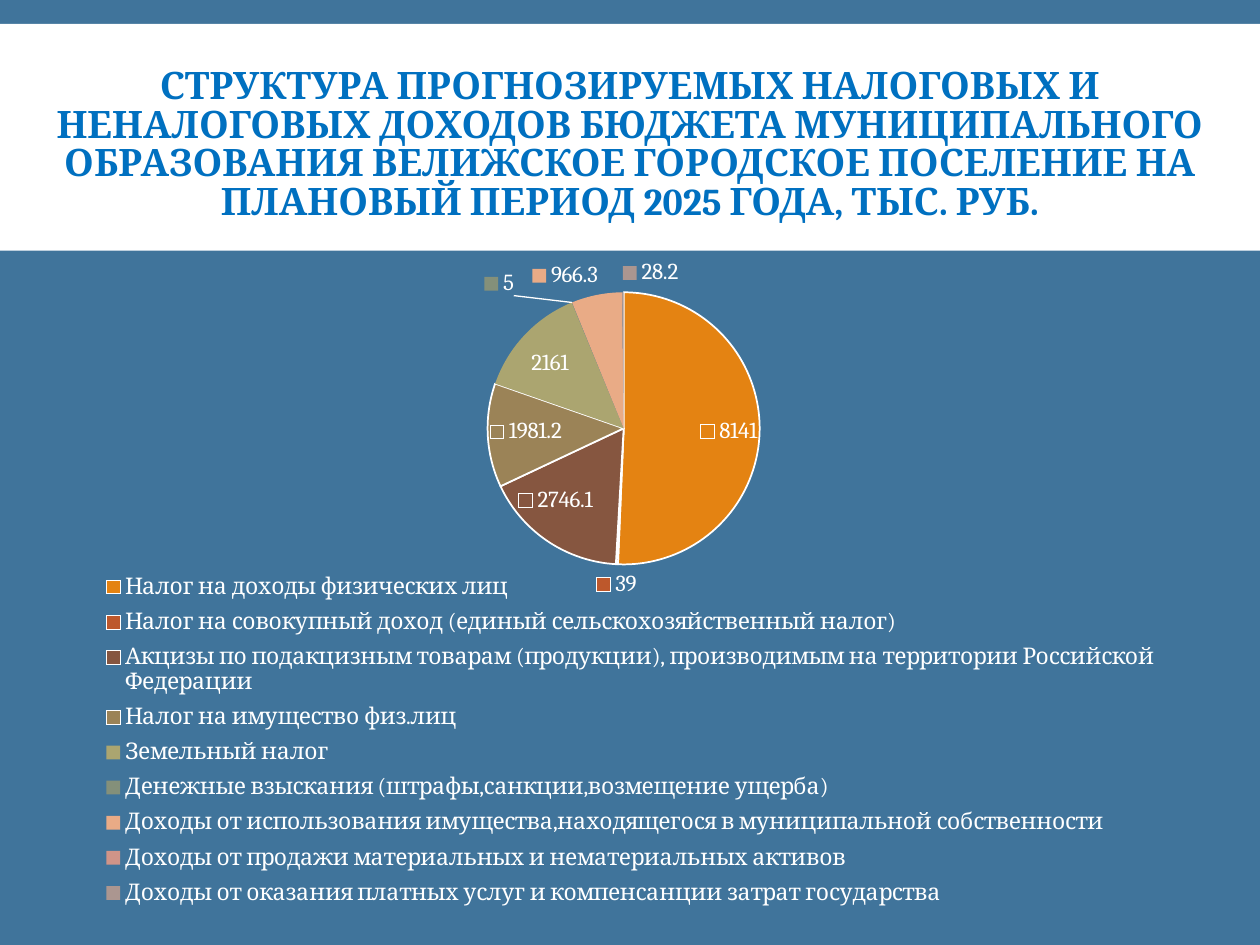
from pptx import Presentation, oxml, util as u
from pptx.chart import data as chart_data
from pptx.dml import color
from pptx.enum import chart as charts, shapes, text
from pptx.oxml import ns

COLORS = {"back": "40749B", "band": "FFFFFF", "title": "0070C0", "text": "FFFFFF"}
FONT = "Cambria"
TEXT_SIZE = 13.1
TITLE = ("СТРУКТУРА ПРОГНОЗИРУЕМЫХ НАЛОГОВЫХ И НЕНАЛОГОВЫХ ДОХОДОВ БЮДЖЕТА "
         "МУНИЦИПАЛЬНОГО ОБРАЗОВАНИЯ ВЕЛИЖСКОЕ ГОРОДСКОЕ ПОСЕЛЕНИЕ НА "
         "ПЛАНОВЫЙ ПЕРИОД 2025 ГОДА, ТЫС. РУБ.")
INCOME = [
    ("Налог на доходы физических лиц", 8141, "E48312"),
    ("Налог на совокупный доход (единый сельскохозяйственный налог)", 39, "BD582C"),
    ("Акцизы по подакцизным товарам (продукции), производимым на территории "
     "Российской Федерации", 2746.1, "865640"),
    ("Налог на имущество физ.лиц", 1981.2, "9B8357"),
    ("Земельный налог", 2161, "ABA570"),
    ("Денежные взыскания (штрафы,санкции,возмещение ущерба)", 5, "84907A"),
    ("Доходы от использования имущества,находящегося в муниципальной собственности",
     966.3, "E9AB86"),
    ("Доходы от продажи материальных и нематериальных активов", None, "D09488"),
    ("Доходы от оказания платных услуг и компенсанции затрат государства", 28.2, "AB9690"),
]
OUTLINED = 4
OUTSIDE = (1, 5, 6, 8)
LABEL_SHIFTS = {0: (0.04, 0), 1: (0, 0), 2: (-0.26, -0.18), 3: (-0.04, -0.03),
                4: (-0.14, 0.09), 5: (-0.44, 0), 6: (0.02, 0), 8: (0.22, 0)}


def rgb(name):
    """Return the colour for a palette name or a hex string."""
    return color.RGBColor.from_string(COLORS.get(name, name))


def style_font(font, size, name):
    """Set the slide's typeface with a size and a colour."""
    font.name, font.size = FONT, u.Pt(size)
    font.color.rgb = rgb(name)


def layout_xml(chart_size, target="", **places):
    """Build a manual chart layout from lengths in inches."""
    parts = f'<c:layoutTarget val="{target}"/>' if target else ""
    if "w" in places:
        parts += '<c:xMode val="edge"/><c:yMode val="edge"/>'
    for key, value in places.items():
        whole = chart_size[0] if key in "xw" else chart_size[1]
        parts += f'<c:{key} val="{u.Inches(value) / whole:.4f}"/>'
    return oxml.parse_xml(f'<c:layout {ns.nsdecls("c")}><c:manualLayout>{parts}'
                          '</c:manualLayout></c:layout>')


def set_layout(parent, layout, after=None):
    """Replace the layout of a chart part."""
    for old in parent.xpath("./c:layout"):
        parent.remove(old)
    if after is None:
        parent.insert(0, layout)
    else:
        parent.xpath(after)[0].addnext(layout)


def add_title(page, left, top, width, height):
    """Draw the white band with the centred heading."""
    band = page.shapes.add_shape(shapes.MSO_SHAPE.RECTANGLE, left, top, width, height)
    band.shadow.inherit = False
    band.fill.solid()
    band.fill.fore_color.rgb = rgb("band")
    band.line.fill.background()
    box = page.shapes.add_textbox(left, top + u.Inches(0.39), width, u.Inches(1.16))
    frame = box.text_frame
    frame.word_wrap = True
    frame.vertical_anchor = text.MSO_ANCHOR.MIDDLE
    para = frame.paragraphs[0]
    para.alignment = text.PP_ALIGN.CENTER
    para.line_spacing = 0.85
    span = para.add_run()
    span.text = TITLE
    style_font(span.font, 21.6, "title")
    span.font.bold = True


def style_points(series):
    """Colour the slices and place their labels."""
    series.format.line.color.rgb = rgb("text")
    for index, (_, _, shade) in enumerate(INCOME):
        point = series.points[index]
        point.format.fill.solid()
        point.format.fill.fore_color.rgb = rgb(shade)
        if index < OUTLINED:
            point.format.line.color.rgb = rgb("text")
            point.format.line.width = u.Pt(1)
        else:
            point.format.line.fill.background()
    spots = charts.XL_LABEL_POSITION
    for index in LABEL_SHIFTS:
        label = series.points[index].data_label
        style_font(label.font, TEXT_SIZE, "text")
        label.position = spots.OUTSIDE_END if index in OUTSIDE else spots.INSIDE_END


def add_leader_lines(root):
    """Give the labels white leader lines."""
    labels = root.xpath(".//c:ser/c:dLbls")[0]
    for old in labels.xpath("./c:showLeaderLines | ./c:leaderLines"):
        labels.remove(old)
    labels.append(oxml.parse_xml(f'<c:showLeaderLines {ns.nsdecls("c")} val="1"/>'))
    labels.append(oxml.parse_xml(
        f'<c:leaderLines {ns.nsdecls("c", "a")}><c:spPr><a:ln w="9525"><a:solidFill>'
        f'<a:srgbClr val="{COLORS["text"]}"/></a:solidFill></a:ln></c:spPr></c:leaderLines>'))


def add_income_chart(page, left, top, width, height):
    """Draw the income pie with its labels and legend."""
    content = chart_data.CategoryChartData()
    content.categories = [name for name, _, _ in INCOME]
    content.add_series("Series 1", [value for _, value, _ in INCOME])
    chart = page.shapes.add_chart(charts.XL_CHART_TYPE.PIE, left, top, width, height,
                                  content).chart
    chart.has_title = False
    style_font(chart.font, TEXT_SIZE, "text")
    chart.has_legend = True
    chart.legend.position = charts.XL_LEGEND_POSITION.BOTTOM
    chart.legend.include_in_layout = False
    style_font(chart.legend.font, TEXT_SIZE, "text")
    plot = chart.plots[0]
    plot.vary_by_categories = True
    series = plot.series[0]
    labels = series.data_labels
    labels.show_value = True
    labels.show_legend_key = True
    labels.position = charts.XL_LABEL_POSITION.INSIDE_END
    style_font(labels.font, TEXT_SIZE, "text")
    style_points(series)
    root = chart.element
    add_leader_lines(root)
    size = (width, height)
    for key in root.xpath(".//c:dLbl/c:showLegendKey"):
        key.set("val", "1")
    for label, (x, y) in zip(root.xpath(".//c:dLbl"), LABEL_SHIFTS.values()):
        set_layout(label, layout_xml(size, x=x, y=y), "./c:idx")
    set_layout(root.xpath(".//c:plotArea")[0],
               layout_xml(size, "inner", x=0, y=0.4, w=9.86, h=2.16))
    set_layout(root.xpath(".//c:legend")[0],
               layout_xml(size, x=0.45, y=2.56, w=9.07, h=2.79), "./c:legendPos")


def main():
    """Build and save the income slide."""
    deck = Presentation()
    deck.slide_width, deck.slide_height = u.Inches(10), u.Inches(7.5)
    page = deck.slides.add_slide(deck.slide_layouts[6])
    page.background.fill.solid()
    page.background.fill.fore_color.rgb = rgb("back")
    add_title(page, 0, u.Inches(0.19), deck.slide_width, u.Inches(1.8))
    add_income_chart(page, u.Inches(0.02), u.Inches(1.92), u.Inches(9.86), u.Inches(5.36))
    deck.save("out.pptx")


if __name__ == "__main__":
    main()
